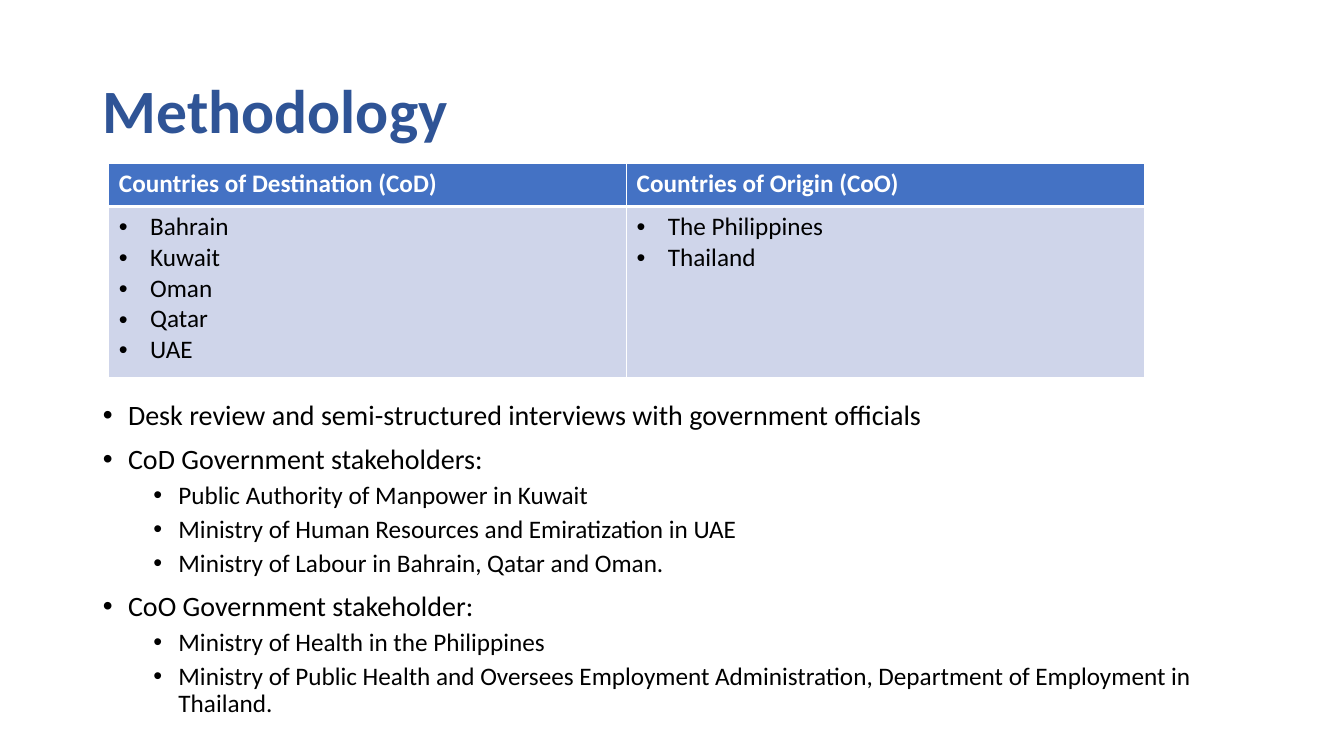
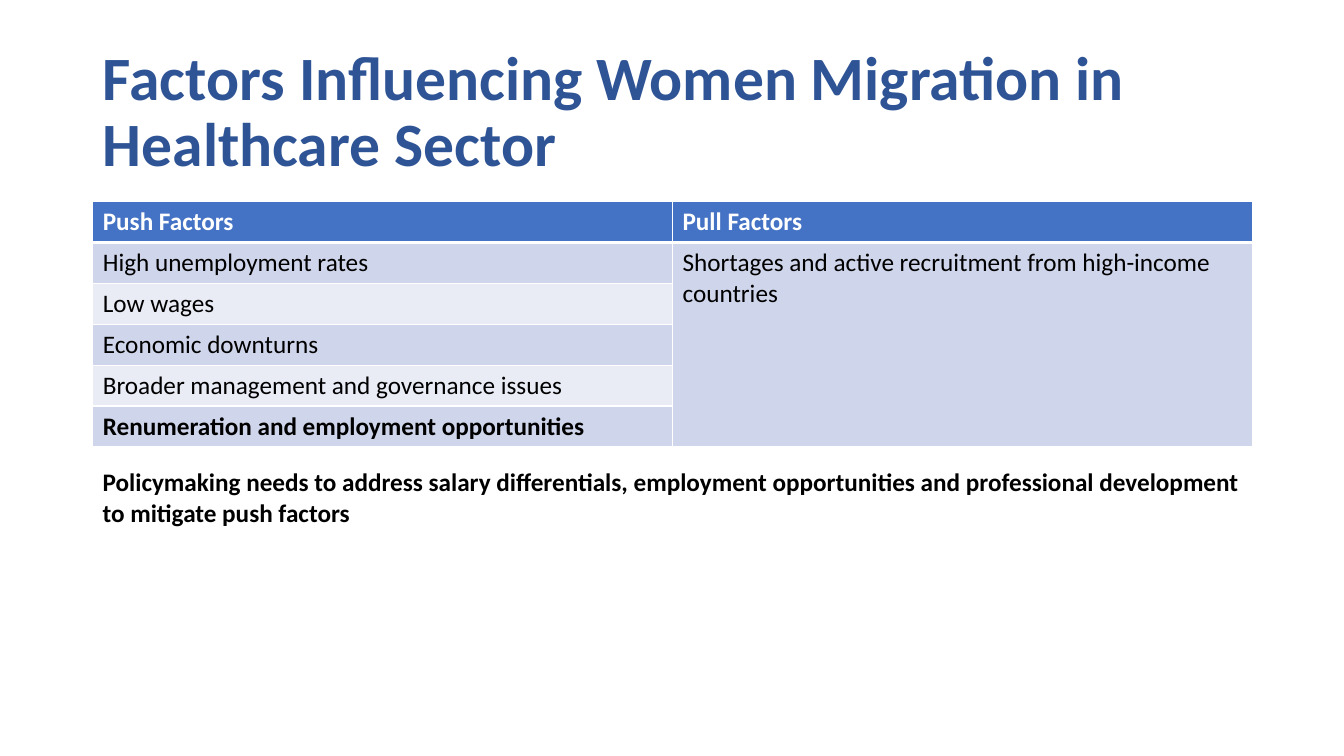
from dataclasses import dataclass

from lxml.etree import SubElement
from pptx import Presentation
from pptx.dml.color import RGBColor
from pptx.enum.text import MSO_ANCHOR, MSO_AUTO_SIZE, PP_ALIGN
from pptx.oxml.ns import qn
from pptx.util import Emu, Pt

PX = 9144  # EMU per px, 100 px to the inch


@dataclass(frozen=True)
class Theme:
    font: str = "Calibri"
    title_color: str = "2F5496"
    text_color: str = "000000"
    white: str = "FFFFFF"
    header_fill: str = "4472C4"
    band_fills: tuple = ("CFD5EA", "E9EBF5")
    title_size: int = 44
    body_size: int = 20
    small_size: int = 18
    border: int = 1
    header_border: int = 3


THEME = Theme()
SLIDE_SIZE = (1333, 750)
TITLE_BOX = (92, 40, 1150, 145)
BODY_BOX = (92, 393, 1150, 357)
NOTE_BOX = (92, 458, 1150, 71)
COUNTRY_BOX = (108, 162, 1027, 213)
FACTOR_BOX = (92, 200, 1150, 243)

LEVEL_FORMATS = (
    dict(size=THEME.body_size, before=10, margin=25, hanging=25),
    dict(size=THEME.small_size, before=5, margin=75, hanging=25),
)

METHODOLOGY_TITLE = "Methodology"
COUNTRIES = {
    "Countries of Destination (CoD)": ["Bahrain", "Kuwait", "Oman", "Qatar", "UAE"],
    "Countries of Origin (CoO)": ["The Philippines", "Thailand"],
}
METHODS = [
    ("Desk review and semi-structured interviews with government officials", []),
    ("CoD Government stakeholders:", [
        "Public Authority of Manpower in Kuwait",
        "Ministry of Human Resources and Emiratization in UAE",
        "Ministry of Labour in Bahrain, Qatar and Oman.",
    ]),
    ("CoO Government stakeholder:", [
        "Ministry of Health in the Philippines",
        "Ministry of Public Health and Oversees Employment Administration, "
        "Department of Employment in Thailand.",
    ]),
]

FACTORS_TITLE = "Factors Influencing Women Migration in Healthcare Sector"
FACTOR_HEADERS = ["Push Factors", "Pull Factors"]
PUSH_FACTORS = [
    "High unemployment rates",
    "Low wages",
    "Economic downturns",
    "Broader management and governance issues",
    "Renumeration and employment opportunities",
]
PULL_FACTOR = "Shortages and active recruitment from high-income countries"
POLICY_NOTE = (
    "Policymaking needs to address salary differentials, employment opportunities "
    "and professional development to mitigate push factors"
)


def scaled(box):
    return [Emu(length * PX) for length in box]


def add_text(frame, text, *, size=THEME.small_size, color=THEME.text_color, bold=False,
             level=0, line_spacing=None, before=0, after=0, margin=0, hanging=0):
    """Append one paragraph; a hanging indent gives it a bullet."""
    paragraph = frame.paragraphs[0]
    if paragraph.runs:
        paragraph = frame.add_paragraph()
    paragraph.alignment = PP_ALIGN.LEFT
    paragraph.level = level
    paragraph.line_spacing = line_spacing
    paragraph.space_before, paragraph.space_after = Pt(before), Pt(after)
    if hanging:
        properties = paragraph._p.get_or_add_pPr()
        properties.set("marL", str(margin * PX))
        properties.set("indent", str(-hanging * PX))
        SubElement(properties, qn("a:buFont"), typeface="Arial")
        SubElement(properties, qn("a:buChar"), char="•")
    run = paragraph.add_run()
    run.text = text
    run.font.name = THEME.font
    run.font.size = Pt(size)
    run.font.bold = bold
    run.font.color.rgb = RGBColor.from_string(color)


def place(shape, box):
    shape.left, shape.top, shape.width, shape.height = scaled(box)
    shape.text_frame.word_wrap = True
    shape.text_frame.auto_size = MSO_AUTO_SIZE.NONE


def add_titled_slide(presentation, layout_name, title, **spacing):
    layout = presentation.slide_layouts.get_by_name(layout_name)
    slide = presentation.slides.add_slide(layout)
    shape = slide.shapes.title
    place(shape, TITLE_BOX)
    shape.text_frame.vertical_anchor = MSO_ANCHOR.MIDDLE
    add_text(shape.text_frame, title, size=THEME.title_size, color=THEME.title_color,
             bold=True, line_spacing=0.9, **spacing)
    return slide


def set_borders(cell, top, bottom):
    """Draw white borders with the given top and bottom widths in points."""
    properties = cell._tc.get_or_add_tcPr()
    widths = {"lnL": THEME.border, "lnR": THEME.border, "lnT": top, "lnB": bottom}
    for side, width in widths.items():
        line = SubElement(properties, qn(f"a:{side}"), w=str(Pt(width)))
        fill = SubElement(line, qn("a:solidFill"))
        SubElement(fill, qn("a:srgbClr"), val=THEME.white)


def add_banded_table(slide, box, headers, body_rows):
    """Add a table with a header row and striped, empty body rows."""
    shape = slide.shapes.add_table(body_rows + 1, len(headers), *scaled(box))
    table = shape.table
    for row in range(body_rows + 1):
        top = THEME.header_border if row == 1 else THEME.border
        bottom = THEME.header_border if row == 0 else THEME.border
        color = THEME.band_fills[(row - 1) % 2] if row else THEME.header_fill
        for column in range(len(headers)):
            cell = table.cell(row, column)
            set_borders(cell, top, bottom)
            cell.fill.solid()
            cell.fill.fore_color.rgb = RGBColor.from_string(color)
    for column, header in enumerate(headers):
        add_text(table.cell(0, column).text_frame, header, color=THEME.white, bold=True)
    return table


def build_methodology(presentation):
    slide = add_titled_slide(presentation, "Title and Content", METHODOLOGY_TITLE)
    body = slide.placeholders[1]
    place(body, BODY_BOX)
    for heading, details in METHODS:
        for level, texts in enumerate(([heading], details)):
            for text in texts:
                add_text(body.text_frame, text, level=level, line_spacing=0.9,
                         **LEVEL_FORMATS[level])

    table = add_banded_table(slide, COUNTRY_BOX, COUNTRIES, 1)
    for row, height in zip(table.rows, (43, 170)):
        row.height = Emu(height * PX)
    for column, countries in enumerate(COUNTRIES.values()):
        for country in countries:
            add_text(table.cell(1, column).text_frame, country, margin=31, hanging=31)


def build_factors(presentation):
    slide = add_titled_slide(presentation, "Title Only", FACTORS_TITLE, before=2, after=12)
    last = len(PUSH_FACTORS)
    table = add_banded_table(slide, FACTOR_BOX, FACTOR_HEADERS, last)
    for row, factor in enumerate(PUSH_FACTORS, start=1):
        add_text(table.cell(row, 0).text_frame, factor, bold=row == last)
    pull_cell = table.cell(1, 1)
    pull_cell.merge(table.cell(last, 1))
    add_text(pull_cell.text_frame, PULL_FACTOR)

    note = slide.shapes.add_textbox(*scaled(NOTE_BOX))
    note.text_frame.word_wrap = True
    add_text(note.text_frame, POLICY_NOTE, bold=True)


def main():
    presentation = Presentation()
    presentation.slide_width, presentation.slide_height = scaled(SLIDE_SIZE)
    build_methodology(presentation)
    build_factors(presentation)
    presentation.save("out.pptx")


if __name__ == "__main__":
    main()
